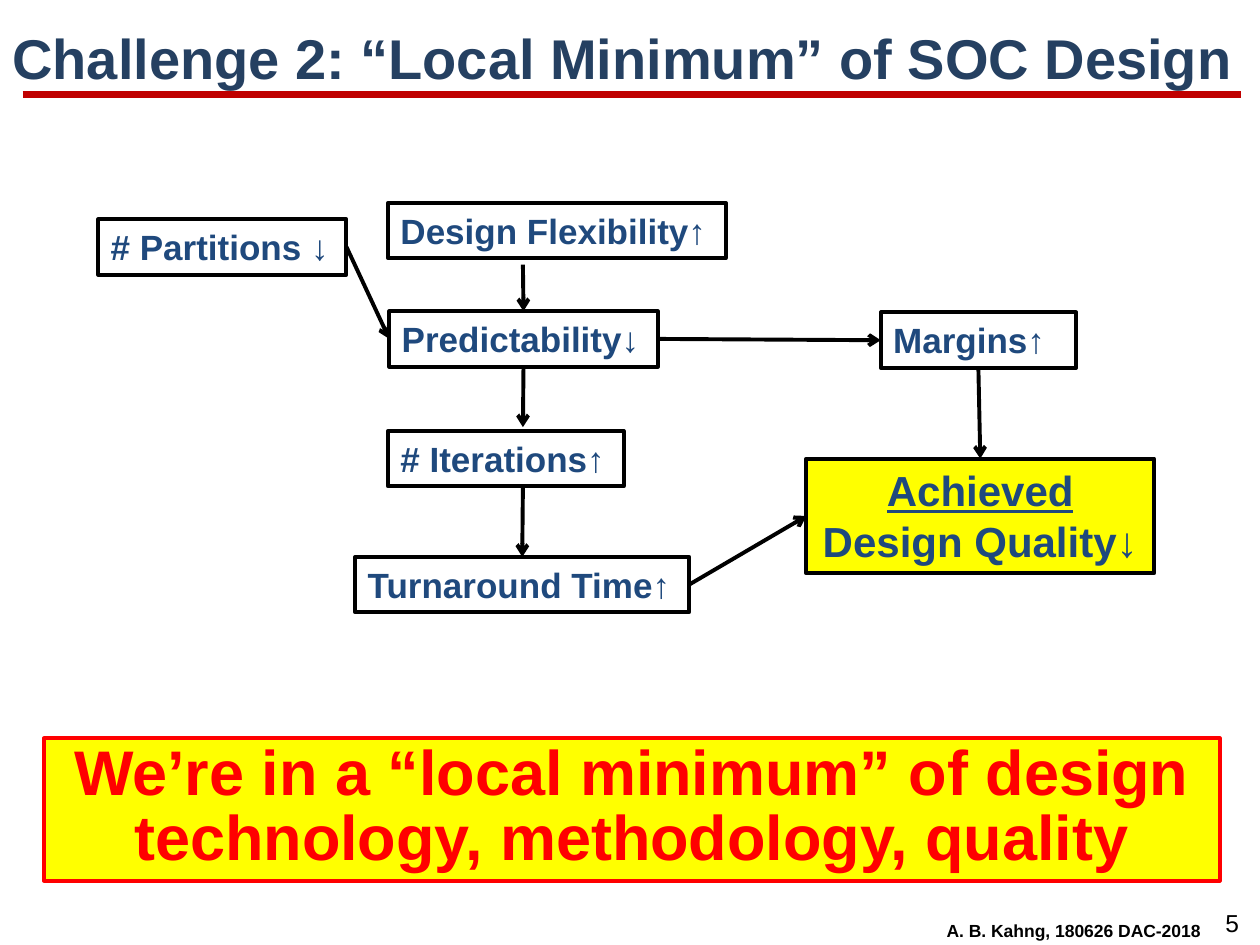
from lxml import etree
from pptx import Presentation
from pptx.dml.color import RGBColor
from pptx.enum.shapes import MSO_CONNECTOR, MSO_SHAPE
from pptx.enum.text import MSO_ANCHOR, PP_ALIGN
from pptx.oxml.ns import qn
from pptx.util import Inches, Pt

STRAIGHT = MSO_CONNECTOR.STRAIGHT
RECTANGLE = MSO_SHAPE.RECTANGLE
LEFT, CENTER = PP_ALIGN.LEFT, PP_ALIGN.CENTER
TOP, MIDDLE = MSO_ANCHOR.TOP, MSO_ANCHOR.MIDDLE
SIDE_TOP, SIDE_LEFT, SIDE_BOTTOM, SIDE_RIGHT = range(4)

COLORS = {
    "title": "254061", "rule": "C00000", "label": "1F497D",
    "black": "000000", "yellow": "FFFF00", "red": "FF0000",
}


def write(shape, lines, size, color, align=LEFT, bold=True, anchor=TOP, spacing=None):
    """Fill a shape with one paragraph per (text, underlined) pair."""
    frame = shape.text_frame
    frame.word_wrap = True
    frame.vertical_anchor = anchor
    for i, (text, underlined) in enumerate(lines):
        paragraph = frame.paragraphs[0] if i == 0 else frame.add_paragraph()
        paragraph.alignment = align
        paragraph.line_spacing = spacing
        run = paragraph.add_run()
        run.text = text
        run.font.name = "Arial"
        run.font.size = Pt(size)
        run.font.bold = bold
        run.font.underline = underlined
        run.font.color.rgb = RGBColor.from_string(COLORS[color])


def add_line(start, end, color, width, arrow=True):
    line = slide.shapes.add_connector(STRAIGHT, *[Inches(v) for v in (*start, *end)])
    line.line.color.rgb = RGBColor.from_string(COLORS[color])
    line.line.width = Pt(width)
    if arrow:
        etree.SubElement(line.line._get_or_add_ln(), qn("a:tailEnd"), type="arrow")
    etree.SubElement(line._element.spPr, qn("a:effectLst"))
    return line


prs = Presentation()
prs.slide_width, prs.slide_height = Inches(10), Inches(7.5)
slide = prs.slides.add_slide(prs.slide_layouts[6])

# Title rule, page number, credit and title
add_line((0.18, 0.75), (9.85, 0.75), "rule", 4.5, arrow=False)
captions = [
    ((9.56, 7.16, 0.44, 0.34), "5", 14, "black", CENTER, False, TOP, None),
    ((7.38, 7.25, 2.28, 0.27), "A. B. Kahng, 180626 DAC-2018", 10, "black",
     CENTER, True, TOP, None),
    ((0, 0.16, 10, 0.65), "Challenge 2: “Local Minimum” of SOC Design", 32, "title",
     LEFT, True, MIDDLE, 0.9),
]
for area, text, *style in captions:
    caption = slide.shapes.add_textbox(*[Inches(v) for v in area])
    write(caption, [(text, False)], *style)

# Boxes: area, lines, fill, outline, then text style
STEP = (None, "black", 20, "label")
boxes = {
    "partitions": ((0.78, 1.74, 1.97, 0.44), [("# Partitions ↓", False)], *STEP),
    "margins": ((6.99, 2.48, 1.55, 0.44), [("Margins↑", False)], *STEP),
    "predictability": ((3.09, 2.47, 2.13, 0.44), [("Predictability↓", False)], *STEP),
    "turnaround": ((2.82, 4.42, 2.65, 0.44), [("Turnaround Time↑", False)], *STEP),
    "iterations": ((3.08, 3.42, 1.87, 0.44), [("# Iterations↑", False)], *STEP),
    "flexibility": ((3.08, 1.61, 2.68, 0.44), [("Design Flexibility↑", False)], *STEP),
    "quality": ((6.4, 3.64, 2.76, 0.91),
                [("Achieved", True), ("Design Quality↓", False)],
                "yellow", "black", 24, "label", CENTER),
    "conclusion": ((0.35, 5.86, 9.33, 1.13),
                   [("We’re in a “local minimum” of design technology, "
                     "methodology, quality", False)],
                   "yellow", "red", 36, "red", CENTER, True, TOP, 0.85),
}
nodes = {}
for name, (area, lines, fill, outline, *style) in boxes.items():
    node = slide.shapes.add_shape(RECTANGLE, *[Inches(v) for v in area])
    node.shadow.inherit = False
    if fill:
        node.fill.solid()
        node.fill.fore_color.rgb = RGBColor.from_string(COLORS[fill])
    else:
        node.fill.background()
    node.line.color.rgb = RGBColor.from_string(COLORS[outline])
    node.line.width = Pt(2.25)
    write(node, lines, *style)
    nodes[name] = node

# Arrows: start, end, and the box sides they are joined to
arrows = [
    ((4.15, 2.1), (4.15, 2.47), None, ("predictability", SIDE_TOP)),
    ((4.15, 2.91), (4.15, 3.39), ("predictability", SIDE_BOTTOM), None),
    ((4.15, 3.87), (4.15, 4.42), None, ("turnaround", SIDE_TOP)),
    ((5.22, 2.69), (6.99, 2.7), ("predictability", SIDE_RIGHT), ("margins", SIDE_LEFT)),
    ((2.75, 1.96), (3.09, 2.69), ("partitions", SIDE_RIGHT), ("predictability", SIDE_LEFT)),
    ((7.77, 2.92), (7.78, 3.64), ("margins", SIDE_BOTTOM), ("quality", SIDE_TOP)),
    ((5.47, 4.64), (6.4, 4.09), ("turnaround", SIDE_RIGHT), ("quality", SIDE_LEFT)),
]
for start, end, source, target in arrows:
    arrow = add_line(start, end, "black", 2.25)
    if source:
        arrow.begin_connect(nodes[source[0]], source[1])
    if target:
        arrow.end_connect(nodes[target[0]], target[1])

prs.save("out.pptx")
